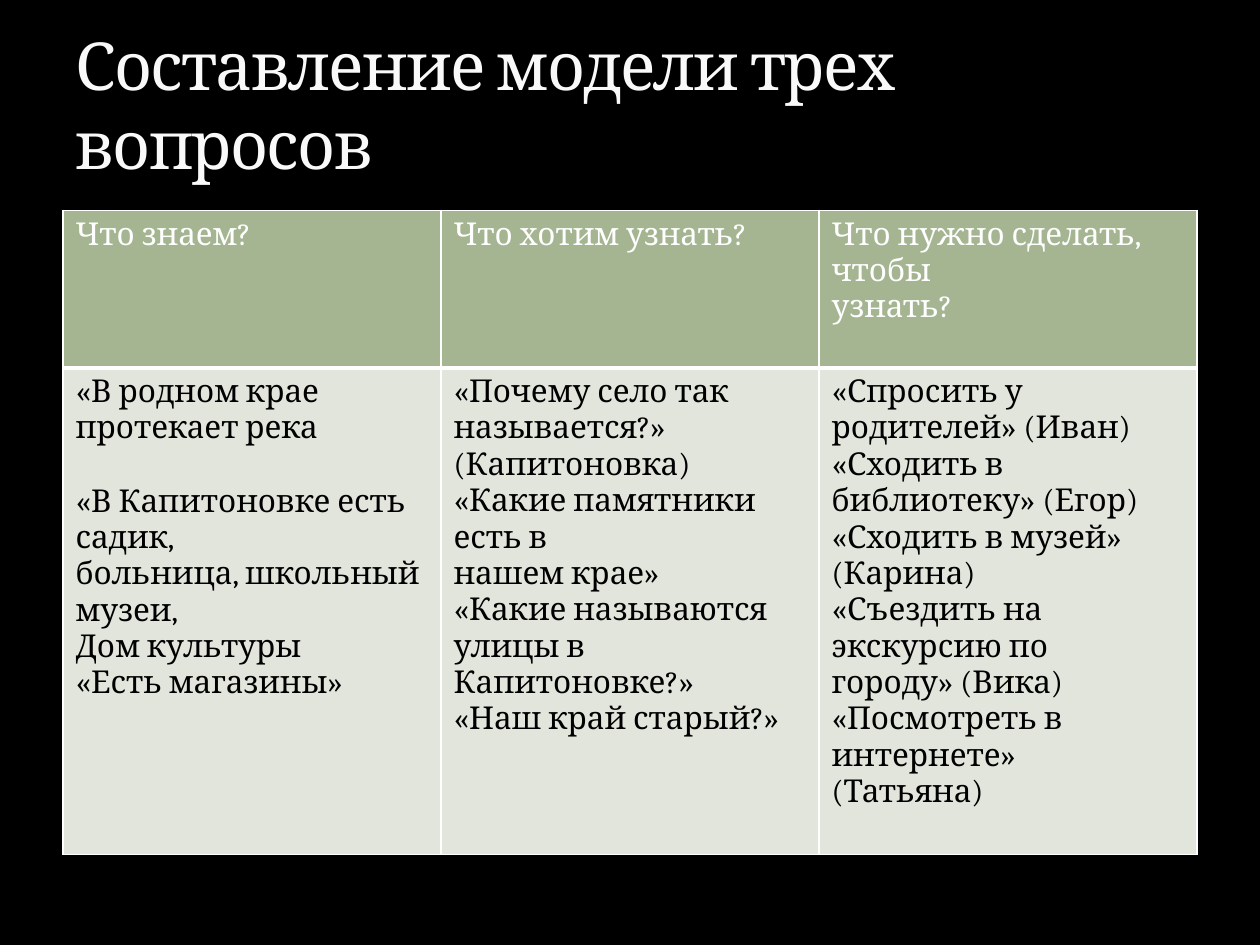
"""Build a slide with a three-question model table."""
from lxml import etree
from pptx import Presentation
from pptx.dml.color import RGBColor
from pptx.enum.text import MSO_ANCHOR
from pptx.oxml.ns import qn
from pptx.util import Inches, Pt

BOTTOM = MSO_ANCHOR.BOTTOM
BLACK = RGBColor(0, 0, 0)
WHITE = RGBColor(255, 255, 255)
PALE = RGBColor(0xF9, 0xF9, 0xF9)
GREEN = RGBColor(0xA5, 0xB5, 0x92)
MIST = RGBColor(0xE1, 0xE5, 0xDC)

FONT = {"name": "Cambria", "size": Pt(18)}
TITLE = "Составление модели трех вопросов"
GAP = "«В Капитоновке есть"
HEADS = [
    ["Что знаем?"],
    ["Что хотим узнать?"],
    ["Что нужно сделать, чтобы", "узнать?"],
]
NOTES = [
    ["«В родном крае", "протекает река", GAP, "садик,",
     "больница, школьный музеи,", "Дом культуры", "«Есть магазины»"],
    ["«Почему село так", "называется?» (Капитоновка)",
     "«Какие памятники есть в", "нашем крае»",
     "«Какие называются улицы в", "Капитоновке?»", "«Наш край старый?»"],
    ["«Спросить у родителей» (Иван)", "«Сходить в библиотеку» (Егор)",
     "«Сходить в музей» (Карина)", "«Съездить на экскурсию по",
     "городу» (Вика)", "«Посмотреть в интернете»", "(Татьяна)"],
]
ROWS = [
    {"texts": HEADS, "high": 1.25, "fill": GREEN, "ink": WHITE,
     "lines": {"lnL": 1, "lnR": 1, "lnT": 1, "lnB": 3}},
    {"texts": NOTES, "high": 3.86, "fill": MIST, "ink": BLACK,
     "lines": {"lnL": 1, "lnR": 1, "lnT": 3, "lnB": 1}},
]


def set_font(run, ink, **extra):
    """Apply the slide font, with any changes, to a run."""
    for key, value in {**FONT, **extra}.items():
        setattr(run.font, key, value)
    run.font.color.rgb = ink


def add_lines(cell, lines):
    """Draw white borders of the given point widths around a cell."""
    props = cell._tc.get_or_add_tcPr()
    for spot, (tag, width) in enumerate(lines.items()):
        line = etree.Element(qn(f"a:{tag}"), w=str(Pt(width)))
        fill = etree.SubElement(line, qn("a:solidFill"))
        etree.SubElement(fill, qn("a:srgbClr"), val=str(WHITE))
        props.insert(spot, line)


def fill_cell(cell, texts, row):
    """Write the paragraphs of a cell and style it."""
    cell.fill.solid()
    cell.fill.fore_color.rgb = row["fill"]
    add_lines(cell, row["lines"])
    frame = cell.text_frame
    for spot, text in enumerate(texts):
        para = frame.add_paragraph() if spot else frame.paragraphs[0]
        run = para.add_run()
        run.text = text
        set_font(run, row["ink"])
        if text == GAP:
            para.space_before = Pt(21)


def add_grid(slide):
    """Add the table of questions and answers."""
    high = sum(row["high"] for row in ROWS)
    table = slide.shapes.add_table(
        len(ROWS), len(HEADS), Inches(0.5), Inches(1.67),
        Inches(9), Inches(high)).table
    for spot, row in enumerate(ROWS):
        table.rows[spot].height = Inches(row["high"])
        for cell, texts in zip(table.rows[spot].cells, row["texts"]):
            fill_cell(cell, texts, row)


def add_title(slide):
    """Add the heading above the table."""
    box = slide.shapes.add_textbox(
        Inches(0.5), Inches(0.17), Inches(9), Inches(1.33))
    frame = box.text_frame
    for key, value in {"word_wrap": True, "vertical_anchor": BOTTOM}.items():
        setattr(frame, key, value)
    run = frame.paragraphs[0].add_run()
    run.text = TITLE
    set_font(run, PALE, size=Pt(37.8))
    run.font._element.set("spc", "-100")


def main():
    """Build and save the slide."""
    deck = Presentation()
    deck.slide_width, deck.slide_height = Inches(10), Inches(7.5)
    slide = deck.slides.add_slide(deck.slide_layouts[6])
    back = slide.background.fill
    back.solid()
    back.fore_color.rgb = BLACK
    add_grid(slide)
    add_title(slide)
    deck.save("out.pptx")


if __name__ == "__main__":
    main()
